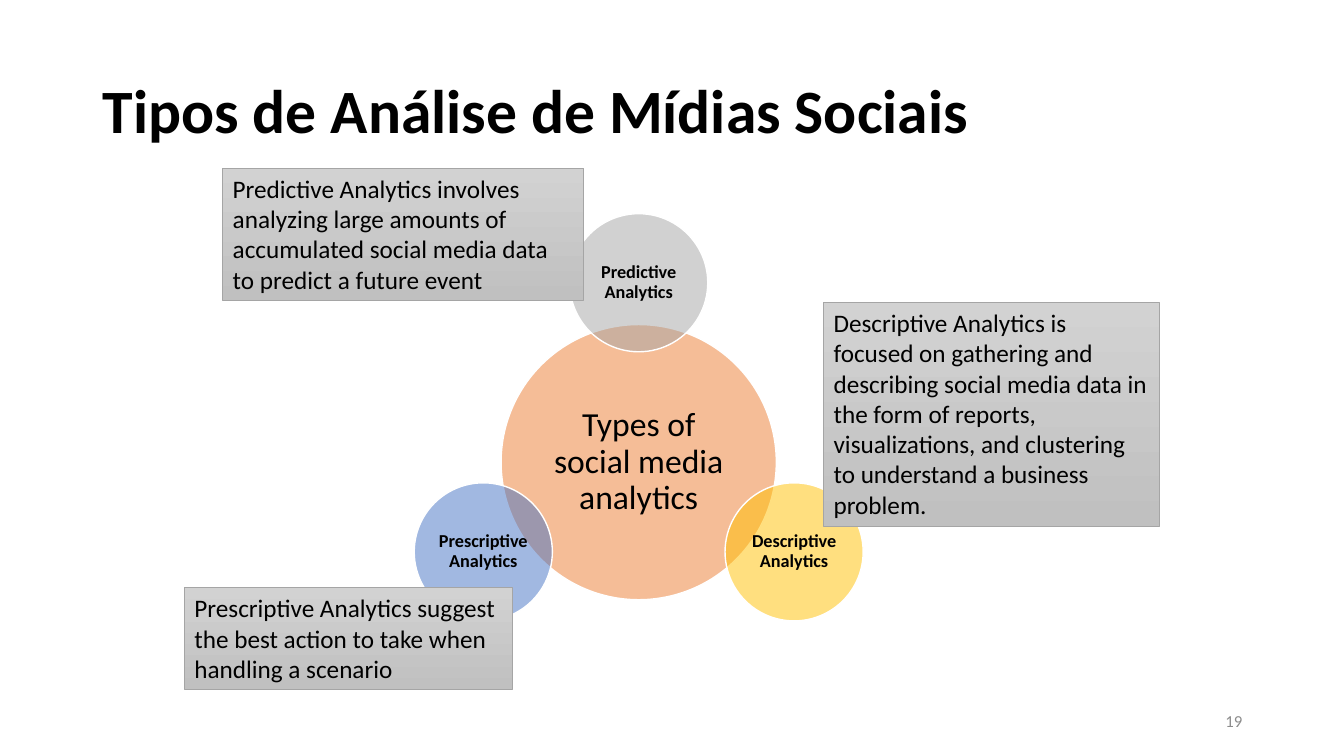
from math import cos, radians, sin

from lxml import etree
from pptx import Presentation
from pptx.dml.color import RGBColor
from pptx.enum.shapes import MSO_SHAPE as Shape
from pptx.enum.text import MSO_ANCHOR as Anchor, PP_ALIGN as Align
from pptx.oxml.ns import qn
from pptx.util import Inches, Pt

BLACK = RGBColor(0x00, 0x00, 0x00)
WHITE = RGBColor(0xFF, 0xFF, 0xFF)
GRAY = RGBColor(0xA5, 0xA5, 0xA5)
ORANGE = RGBColor(0xED, 0x7D, 0x31)
GOLD = RGBColor(0xFF, 0xC0, 0x00)
BLUE = RGBColor(0x44, 0x72, 0xC4)
LIGHT = RGBColor(0xD2, 0xD2, 0xD2)
DARK = RGBColor(0xC0, 0xC0, 0xC0)
MUTED = RGBColor(0x8C, 0x8C, 0x8C)

TITLE = "Tipos de Análise de Mídias Sociais"
NUMBER = "19"
HUB = "Types of social media analytics"
TYPES = [
    ("Predictive Analytics", GRAY),
    ("Descriptive Analytics", GOLD),
    ("Prescriptive Analytics", BLUE),
]
NOTES = [
    ("Descriptive Analytics is focused on gathering and describing social media "
     "data in the form of reports, visualizations, and clustering to understand "
     "a business problem.", (8.17, 3, 3.33, 2.22)),
    ("Predictive Analytics involves analyzing large amounts of accumulated "
     "social media data to predict a future event", (2.21, 1.67, 3.58, 1.31)),
    ("Prescriptive Analytics suggest the best action to take when handling "
     "a scenario", (1.83, 5.83, 3.25, 1.01)),
]
MID_X, MID_Y = 6.335, 4.585
HUB_SIZE, TYPE_SIZE, ORBIT = 2.73, 1.37, 1.78


def write(shape, text, size, color=BLACK, bold=False, align=Align.LEFT,
          anchor=Anchor.MIDDLE, spacing=1.0):
    frame = shape.text_frame
    frame.word_wrap = True
    frame.vertical_anchor = anchor
    para = frame.paragraphs[0]
    para.text = text
    para.alignment = align
    para.line_spacing = spacing
    font = para.font
    font.name, font.size, font.bold = "Calibri", Pt(size), bold
    font.color.rgb = color
    return frame


def add_label(box, text, size, **style):
    write(slide.shapes.add_textbox(*map(Inches, box)), text, size, **style)


def add_shape(kind, box, line, width):
    shape = slide.shapes.add_shape(kind, *map(Inches, box))
    shape.shadow.inherit = False
    shape.line.color.rgb = line
    shape.line.width = Pt(width)
    return shape


def add_circle(x, y, side, color, text, size, inset, bold):
    box = (x - side / 2, y - side / 2, side, side)
    circle = add_shape(Shape.OVAL, box, WHITE, 1)
    circle.fill.solid()
    circle.fill.fore_color.rgb = color
    tint = circle.fill._xPr.find(qn("a:solidFill"))[0]
    etree.SubElement(tint, qn("a:alpha")).set("val", "50000")
    frame = write(circle, text, size, bold=bold, align=Align.CENTER, spacing=0.9)
    frame.margin_left = frame.margin_right = Inches(inset)
    frame.margin_top = frame.margin_bottom = Inches(inset)


def add_note(text, box):
    note = add_shape(Shape.RECTANGLE, box, GRAY, 0.5)
    note.fill.gradient()
    note.fill.gradient_angle = 270
    for stop, color in zip(note.fill.gradient_stops, (LIGHT, DARK)):
        stop.color.rgb = color
    write(note, text, 18, anchor=Anchor.TOP)


deck = Presentation()
deck.slide_width, deck.slide_height = Inches(13.33), Inches(7.5)
slide = deck.slides.add_slide(deck.slide_layouts[6])

add_label((9.42, 6.95, 3, 0.4), NUMBER, 12, color=MUTED, align=Align.RIGHT)
add_label((0.92, 0.4, 11.5, 1.45), TITLE, 44, bold=True, spacing=0.9)

add_circle(MID_X, MID_Y, HUB_SIZE, ORANGE, HUB, 24, 0.03, False)
for i, (name, color) in enumerate(TYPES):
    turn = radians(360 / len(TYPES) * i - 90)
    x, y = MID_X + ORBIT * cos(turn), MID_Y + ORBIT * sin(turn)
    add_circle(x, y, TYPE_SIZE, color, name, 13, 0.02, True)

for text, box in NOTES:
    add_note(text, box)

deck.save("out.pptx")
